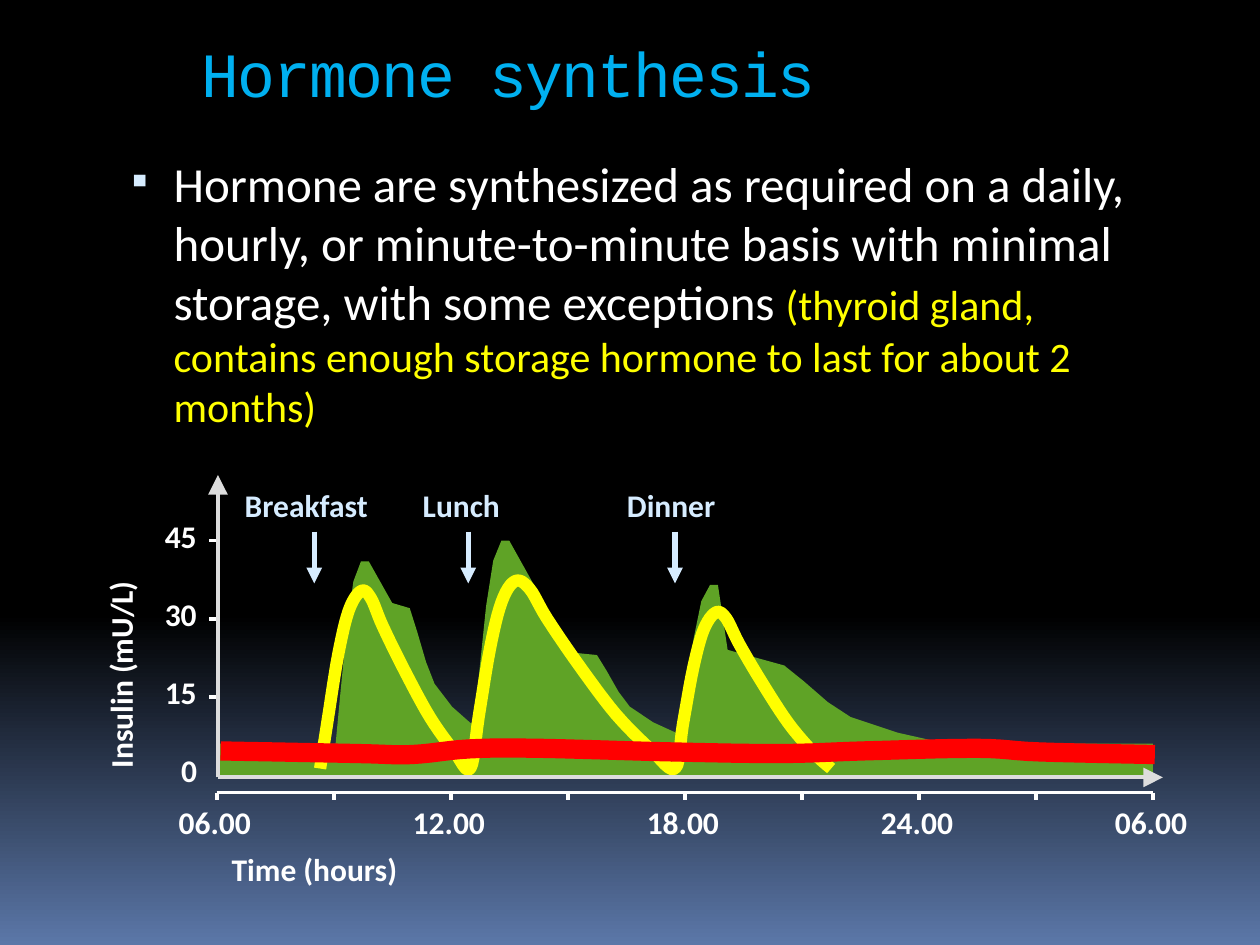
"""Build a slide on hormone synthesis with a daily insulin curve."""
from lxml import etree
from pptx import Presentation
from pptx import util as u
from pptx.dml.color import RGBColor
from pptx.enum import shapes, text
from pptx.oxml.ns import qn

WHITE, PALE, GREY = "FFFFFF", "D6ECFF", "DDDDDD"
BLACK, NAVY, BLUE = "000000", "5B77A8", "00B0F0"
YELLOW, RED, GREEN = "FFFF00", "FF0000", "5FA326"

TITLE = "Hormone synthesis"
BODY = [
    ("Hormone are synthesized as required on a daily, hourly, or "
     "minute-to-minute basis with minimal storage, with some exceptions ", 28, WHITE),
    ("(thyroid gland, contains enough storage hormone to last for about 2 months)",
     24, YELLOW),
]
HOURS = {6: "06.00", 12: "12.00", 18: "18.00", 24: "24.00", 30: "06.00"}
LEVELS = {0: 0.33, 15: 0.46, 30: 0.46, 45: 0.46}
MEALS = [("Breakfast", 8.5, 1.3), ("Lunch", 12.45, 0.92), ("Dinner", 17.75, 0.96)]

# Every curve point below is (hour, insulin level in mU/L).
REST = 6
SURGES = [
    dict(foot=(9.05, REST), peak=(9.8, 41), shelf=[(10.5, 33), (10.95, 32)],
         end=(12.5, 10)),
    dict(foot=(12.6, 10), peak=(13.4, 45), shelf=[(15.1, 23.5), (15.75, 23)],
         end=(17.8, 8)),
    dict(foot=(17.9, 8), peak=(18.75, 36.5), shelf=[(19.1, 24), (20.55, 21)],
         end=(24.7, REST)),
]
PULSES = [
    dict(foot=(8.65, 1.2), peak=(9.7, 35.3), end=(12.5, 1.2)),
    dict(foot=(12.5, 1.2), peak=(13.65, 37.2), end=(17.75, 1.2)),
    dict(foot=(17.75, 1.2), peak=(18.8, 31.2), end=(21.75, 1.2)),
]
BASAL = [(6.1, 4.6), (9.6, 4.1), (11, 3.9), (12.5, 5), (14.3, 5.1), (17.7, 4.4),
         (20.5, 4.1), (22.6, 4.6), (25.5, 5.1), (27.1, 4.4), (30.05, 3.9)]

# Shared profiles: (share of the time span, share of the height).
RISE = [(0, 0), (0.19, 0.28), (0.44, 0.64), (0.7, 0.89), (1, 1)]
FALL = [(0, 1), (0.09, 0.96), (0.2, 0.8), (0.4, 0.55), (0.63, 0.29), (0.85, 0.1), (1, 0)]
DECAY = [(0, 1), (0.12, 0.8), (0.27, 0.53), (0.41, 0.34), (0.7, 0.14), (1, 0)]

LEFT, RIGHT, BASE, TOP = 1.72, 9.15, 6.15, 4.29
SCALE_Y, TICK, ROW = 6.29, 0.06, 0.38


def across(hour):
    return LEFT + (hour - 6) * (RIGHT - LEFT) / 24


def down(level):
    return BASE - level * (BASE - TOP) / 45


def trace(profile, start, stop):
    low = min(start[1], stop[1])
    rise = abs(stop[1] - start[1])
    return [(start[0] + t * (stop[0] - start[0]), low + v * rise) for t, v in profile]


def pulse(foot, peak, end):
    return trace(RISE, foot, peak) + trace(FALL, peak, end)[1:]


def surge(foot, peak, shelf, end):
    hour, level = peak
    crown = [(hour - 0.1, level), (hour + 0.1, level)]
    return trace(RISE, foot, crown[0]) + crown[1:] + shelf + trace(DECAY, shelf[1], end)[1:]


def smooth(points, steps=6):
    ends = [points[0]] + points + [points[-1]]
    curve = []
    for quad in zip(ends, ends[1:], ends[2:], ends[3:]):
        for t in (k / steps for k in range(steps)):
            curve.append(tuple(
                b + t / 2 * (c - a + t * (2 * a - 5 * b + 4 * c - d
                                          + t * (3 * (b - c) + d - a)))
                for a, b, c, d in zip(*quad)))
    return curve + points[-1:]


def color(code):
    return RGBColor.from_string(code)


def write(slide, box, runs, bold=True, wrap=False, font="Calibri"):
    shape = slide.shapes.add_textbox(*map(u.Inches, box))
    shape.text_frame.word_wrap = wrap
    para = shape.text_frame.paragraphs[0]
    for words, size, hue in runs:
        run = para.add_run()
        run.text = words
        run.font.size, run.font.bold, run.font.name = u.Pt(size), bold, font
        run.font.color.rgb = color(hue)
    return shape


def label(slide, words, left, top, wide, hue=WHITE, wrap=False):
    return write(slide, (left, top, wide, ROW), [(words, 18, hue)], wrap=wrap)


def indent(para, left, hang):
    props = para._p.get_or_add_pPr()
    props.set("marL", str(u.Inches(left)))
    props.set("indent", str(u.Inches(-hang)))
    return props


def bullet(para):
    props = indent(para, 0.45, 0.38)
    hue = etree.SubElement(props, qn("a:buClr"))
    etree.SubElement(hue, qn("a:srgbClr"), val=PALE)
    etree.SubElement(props, qn("a:buSzPct"), val="95000")
    etree.SubElement(props, qn("a:buFont"), typeface="Courier New")
    etree.SubElement(props, qn("a:buChar"), char="▪")


def rule(slide, start, end, hue=WHITE, width=2.25, head=None):
    line = slide.shapes.add_connector(
        shapes.MSO_CONNECTOR.STRAIGHT, *map(u.Inches, start + end))
    line.line.color.rgb = color(hue)
    line.line.width = u.Pt(width)
    props = line._element.spPr
    if head:
        etree.SubElement(props.find(qn("a:ln")), qn("a:tailEnd"),
                         type="triangle", w=head, len=head)
    etree.SubElement(props, qn("a:effectLst"))


def plot(slide, points, hue, width=None):
    spots = [(u.Inches(across(h)), u.Inches(down(v))) for h, v in points]
    pen = slide.shapes.build_freeform(*spots[0], scale=1.0)
    pen.add_line_segments(spots[1:], close=width is None)
    shape = pen.convert_to_shape()
    shape.shadow.inherit = False
    paint, clear = (shape.line.fill, shape.fill) if width else (shape.fill, shape.line.fill)
    clear.background()
    paint.solid()
    paint.fore_color.rgb = color(hue)
    if width:
        shape.line.width = u.Pt(width)


def shade(slide):
    fill = slide.background.fill
    fill.gradient()
    fill.gradient_angle = 270
    for stop, place, hue in zip(fill.gradient_stops, (0.65, 1), (BLACK, NAVY)):
        stop.position = place
        stop.color.rgb = color(hue)


def head_text(slide):
    title = write(slide, (1.5, 0.23, 8.5, 0.77), [(TITLE, 36, BLUE)], False, True,
                  "Courier New").text_frame
    title.vertical_anchor = text.MSO_ANCHOR.MIDDLE
    title.margin_bottom = u.Inches(0.13)
    title.paragraphs[0].runs[0].font._element.set("spc", "-100")
    body = write(slide, (0.83, 1.17, 8.5, 2.5), BODY, False, True).text_frame
    body.paragraphs[0].space_before = u.Pt(7)
    bullet(body.paragraphs[0])


def scales(slide):
    label(slide, "Insulin (mU/L)", -0.18, 4.88, 2.25, wrap=True).rotation = 270
    time = label(slide, "Time (hours)", 1.74, 6.7, 7.33, wrap=True)
    indent(time.text_frame.paragraphs[0], 0.24, 0.24)
    rule(slide, (LEFT, SCALE_Y), (RIGHT, SCALE_Y))
    for x in map(across, range(6, 31, 3)):
        rule(slide, (x, SCALE_Y), (x, SCALE_Y + TICK))
    for hour, words in HOURS.items():
        label(slide, words, across(hour) - 0.4, 6.32, 0.8)
    for level, wide in LEVELS.items():
        y = down(level)
        label(slide, str(level), 1.67 - wide, y - 0.24, wide)
        if level:
            rule(slide, (LEFT - TICK, y), (LEFT, y))


def curves(slide):
    area = [p for part in SURGES for p in surge(**part)]
    plot(slide, [(6, 0), (6, REST)] + area + [(30, REST), (30, 0)], GREEN)
    waves = [p for part in PULSES for p in pulse(**part)]
    plot(slide, smooth(list(dict.fromkeys(waves))), YELLOW, 7)
    plot(slide, smooth(BASAL), RED, 11)


def main():
    deck = Presentation()
    deck.slide_width, deck.slide_height = u.Inches(10), u.Inches(7.5)
    slide = deck.slides.add_slide(deck.slide_layouts[6])
    shade(slide)
    head_text(slide)
    curves(slide)
    scales(slide)
    for words, hour, wide in MEALS:
        x = across(hour)
        label(slide, words, x - wide / 2, 3.81, wide, PALE)
        rule(slide, (x, 4.22), (x, 4.63), PALE, 3, "med")
    for tip in ((1.73, 3.77), (9.23, 6.17)):
        rule(slide, (1.73, 6.17), tip, GREY, head="lg")
    deck.save("out.pptx")


if __name__ == "__main__":
    main()
